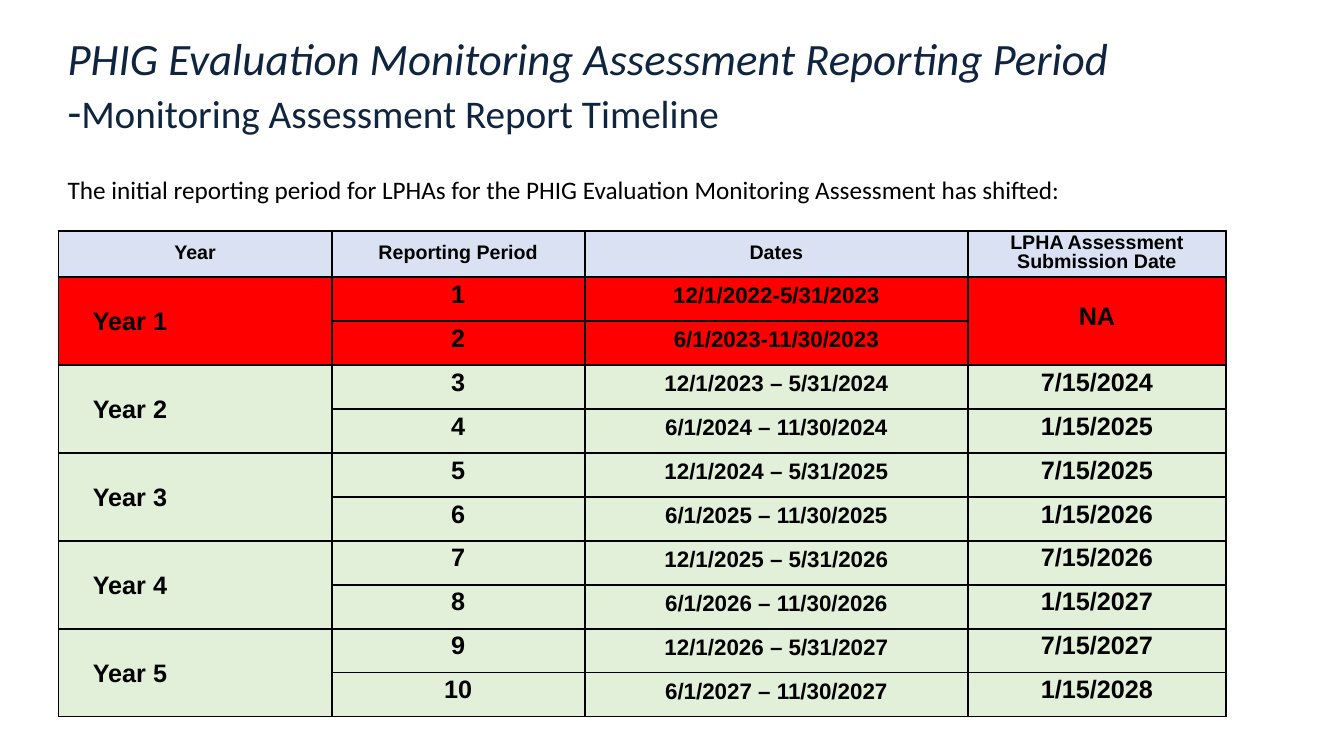
"""Build the reporting timeline slide with its title, lead line and merged table."""
from pptx import Presentation
from pptx import util as u
from pptx.dml.color import RGBColor
from pptx.enum import text
from pptx.oxml import parse_xml
from pptx.oxml.ns import nsdecls

TITLE = [
    [("PHIG Evaluation Monitoring Assessment Reporting Period", 32, True)],
    [("-", 32, False), ("Monitoring Assessment Report Timeline", 28, False)],
]
LEAD = "The initial reporting period for LPHAs for the PHIG Evaluation Monitoring Assessment has shifted:"
HEADS = ["Year", "Reporting Period", "Dates", "LPHA Assessment Submission Date"]
YEARS = [
    ("Year 1", ["12/1/2022-5/31/2023", "6/1/2023-11/30/2023"], ["NA"]),
    ("Year 2", ["12/1/2023 – 5/31/2024", "6/1/2024 – 11/30/2024"], ["7/15/2024", "1/15/2025"]),
    ("Year 3", ["12/1/2024 – 5/31/2025", "6/1/2025 – 11/30/2025"], ["7/15/2025", "1/15/2026"]),
    ("Year 4", ["12/1/2025 – 5/31/2026", "6/1/2026 – 11/30/2026"], ["7/15/2026", "1/15/2027"]),
    ("Year 5", ["12/1/2026 – 5/31/2027", "6/1/2027 – 11/30/2027"], ["7/15/2027", "1/15/2028"]),
]
COLORS = {"ink": "000000", "navy": "0F243E", "head": "D9E1F3", "past": "FF0000", "due": "E2EFD9"}
COLS = [2.71, 2.51, 3.8, 2.56]
HEAD_H, TABLE_H = 0.46, 4.82
LEFT, WIDE = 0.67, 12


def write(para, words, size=18, font="Arial", color="ink", bold=False, slant=False,
          align=text.PP_ALIGN.LEFT, gap=None):
    run = para.add_run()
    run.text = words
    face = run.font
    face.name, face.size, face.bold, face.italic = font, u.Pt(size), bold, slant
    face.color.rgb = RGBColor.from_string(COLORS[color])
    para.alignment = align
    para.space_before = u.Pt(0)
    if gap:
        para.line_spacing = gap


def place(hold, top, high):
    hold.left, hold.top, hold.width, hold.height = map(u.Inches, (LEFT, top, WIDE, high))
    frame = hold.text_frame
    frame.margin_left = frame.margin_right = frame.margin_top = frame.margin_bottom = 0
    frame.vertical_anchor = text.MSO_ANCHOR.TOP
    frame.auto_size = text.MSO_AUTO_SIZE.NONE
    return frame.paragraphs[0]


def dress(cell, fill):
    cell.margin_left = cell.margin_right = cell.margin_top = cell.margin_bottom = 0
    cell.vertical_anchor = text.MSO_ANCHOR.MIDDLE
    props = cell._tc.get_or_add_tcPr()
    for side in "LRTB":
        props.append(parse_xml(
            f'<a:ln{side} {nsdecls("a")} w="{u.Pt(1.5)}"><a:solidFill>'
            f'<a:srgbClr val="{COLORS["ink"]}"/></a:solidFill></a:ln{side}>'))
    cell.fill.solid()
    cell.fill.fore_color.rgb = RGBColor.from_string(COLORS[fill])


def fill_grid(grid):
    mid = {"bold": True, "align": text.PP_ALIGN.CENTER, "gap": u.Pt(13.6)}

    def para(row, col):
        return grid.cell(row, col).text_frame.paragraphs[0]

    for col, head in enumerate(HEADS):
        dress(grid.cell(0, col), "head")
        write(para(0, col), head, size=14, **mid)
    for num, (year, spans, dues) in enumerate(YEARS):
        top = 1 + 2 * num
        for row in (top, top + 1):
            for col in range(len(COLS)):
                dress(grid.cell(row, col), "past" if num == 0 else "due")
        grid.cell(top, 0).merge(grid.cell(top + 1, 0))
        para(top, 0)._p.get_or_add_pPr().set("marL", str(u.Inches(0.34)))
        write(para(top, 0), year, bold=True, gap=1.07)
        for step, span in enumerate(spans):
            write(para(top + step, 1), str(top + step), **mid)
            write(para(top + step, 2), span, size=16, **mid)
        if len(dues) == 1:
            grid.cell(top, 3).merge(grid.cell(top + 1, 3))
        for step, due in enumerate(dues):
            write(para(top + step, 3), due, **mid)


def main():
    deck = Presentation()
    deck.slide_width, deck.slide_height = u.Inches(13.33), u.Inches(7.5)
    slide = deck.slides.add_slide(deck.slide_layouts[1])

    title = place(slide.shapes.title, 0.3, 1.08)
    for num, line in enumerate(TITLE):
        if num:
            title.add_line_break()
        for words, size, slant in line:
            write(title, words, size=size, font="Calibri", color="navy", slant=slant)

    lead = place(slide.placeholders[1], 1.73, 0.5)
    props = lead._p.get_or_add_pPr()
    props.set("marL", "0")
    props.set("indent", "0")
    props.append(parse_xml(f'<a:buNone {nsdecls("a")}/>'))
    write(lead, LEAD, font="Calibri")

    rows = 1 + 2 * len(YEARS)
    grid = slide.shapes.add_table(rows, len(COLS), u.Inches(0.58), u.Inches(2.29),
                                  u.Inches(sum(COLS)), u.Inches(TABLE_H)).table
    for col, wide in zip(grid.columns, COLS):
        col.width = u.Inches(wide)
    for num, row in enumerate(grid.rows):
        row.height = u.Inches((TABLE_H - HEAD_H) / (rows - 1) if num else HEAD_H)
    fill_grid(grid)
    deck.save("out.pptx")


if __name__ == "__main__":
    main()
